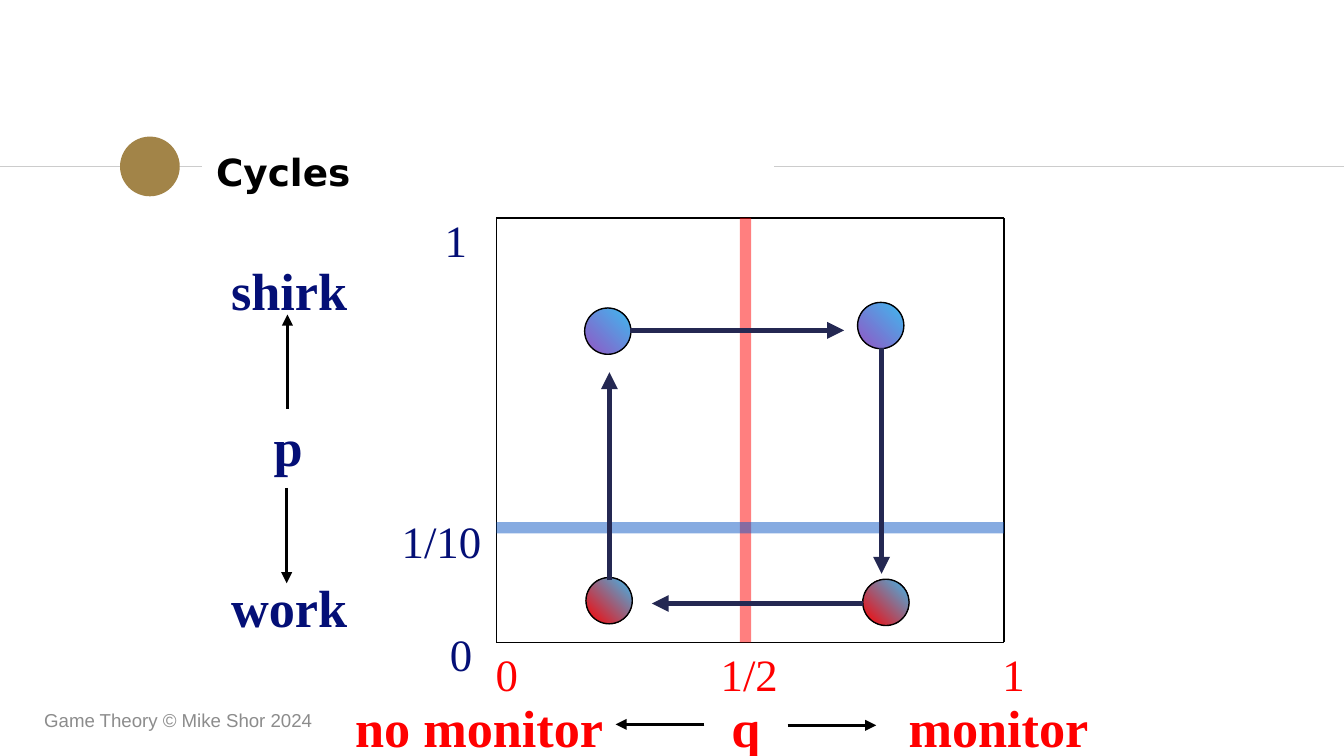
from dataclasses import dataclass
from lxml.etree import SubElement
from pptx import Presentation
from pptx.dml.color import RGBColor
from pptx.enum.shapes import MSO_CONNECTOR, MSO_SHAPE
from pptx.enum.text import MSO_ANCHOR, PP_ALIGN
from pptx.oxml.ns import qn
from pptx.util import Pt

COLORS = {
    "black": "000000", "rule": "CCCCCC", "gold": "A28448", "navy": "040F76",
    "red": "FF0000", "blue": "0E58C4", "ink": "242852", "violet": "9454C3",
    "sky": "3EBBF0", "gray": "8C8C8C",
}
SERIF = "Times New Roman"
LEFT, CENTER, RIGHT = PP_ALIGN.LEFT, PP_ALIGN.CENTER, PP_ALIGN.RIGHT


@dataclass
class Label:
    text: str
    left: float
    top: float
    width: float
    height: float
    color: str
    align: PP_ALIGN = LEFT
    size: float = 24
    bold: bool = False
    font: str = SERIF
    inset: float = 6.5
    anchor: MSO_ANCHOR = MSO_ANCHOR.TOP


@dataclass
class Line:
    x1: float
    y1: float
    x2: float
    y2: float
    color: str = "black"
    width: float = 0.75
    arrow: bool = False
    alpha: int = 100


@dataclass
class Dot:
    left: float
    top: float
    start: str


def rgb(name: str) -> RGBColor:
    return RGBColor.from_string(COLORS[name])


def add_label(shapes, item: Label) -> None:
    box = shapes.add_textbox(Pt(item.left), Pt(item.top), Pt(item.width), Pt(item.height))
    frame = box.text_frame
    frame.word_wrap = True
    frame.margin_top = Pt(item.inset)
    frame.vertical_anchor = item.anchor
    para = frame.paragraphs[0]
    para.alignment = item.align
    run = para.add_run()
    run.text = item.text
    run.font.name = item.font
    run.font.size = Pt(item.size)
    run.font.bold = item.bold
    run.font.color.rgb = rgb(item.color)


def add_line(shapes, item: Line) -> None:
    line = shapes.add_connector(
        MSO_CONNECTOR.STRAIGHT, Pt(item.x1), Pt(item.y1), Pt(item.x2), Pt(item.y2))
    line.line.color.rgb = rgb(item.color)
    line.line.width = Pt(item.width)
    props = line.line._get_or_add_ln()
    if item.alpha < 100:
        tint = props.find(".//" + qn("a:srgbClr"))
        SubElement(tint, qn("a:alpha")).set("val", str(item.alpha * 1000))
    if item.arrow:
        SubElement(props, qn("a:tailEnd")).set("type", "triangle")
    SubElement(line._element.spPr, qn("a:effectLst"))


def add_disc(shapes, left: float, top: float, size: float):
    disc = shapes.add_shape(MSO_SHAPE.OVAL, Pt(left), Pt(top), Pt(size), Pt(size))
    disc.shadow.inherit = False
    return disc


def add_dot(shapes, item: Dot) -> None:
    dot = add_disc(shapes, item.left, item.top, 24.8)
    dot.fill.gradient()
    dot.fill.gradient_angle = 45
    for stop, name in zip(dot.fill.gradient_stops, (item.start, "sky")):
        stop.color.rgb = rgb(name)
    dot.line.color.rgb = rgb("black")
    dot.line.width = Pt(0.75)


deck = Presentation()
deck.slide_width, deck.slide_height = Pt(720), Pt(405)
shapes = deck.slides.add_slide(deck.slide_layouts[6]).shapes

# Title band
add_line(shapes, Line(0, 89.2, 108.5, 89.2, "rule"))
badge = add_disc(shapes, 64.3, 73.2, 32)
badge.fill.solid()
badge.fill.fore_color.rgb = rgb("gold")
badge.line.fill.background()
add_line(shapes, Line(414.7, 89.2, 720, 89.2, "rule"))
add_label(shapes, Label("Cycles", 108.7, 72.7, 305.3, 34.6, "black", size=20, bold=True,
                        font="DejaVu Sans", inset=7.2, anchor=MSO_ANCHOR.MIDDLE))

# Strategy names
for text, left, top, width, color, align in (
    ("q", 378, 365.8, 43.2, "red", CENTER),
    ("p", 137.5, 215.3, 31.7, "navy", RIGHT),
    ("shirk", 100.1, 131.8, 92.9, "navy", RIGHT),
    ("work", 88.6, 301.7, 104.4, "navy", RIGHT),
    ("monitor", 473, 365.8, 123.8, "red", CENTER),
    ("no monitor", 169.9, 365.8, 173.5, "red", CENTER),
):
    add_label(shapes, Label(text, left, top, width, 41, color, align, 28, True))

# Chart frame and the two threshold bands
WEST, EAST, NORTH, SOUTH = 266, 537.8, 116.8, 344.2
for y in (NORTH, SOUTH):
    add_line(shapes, Line(WEST, y, EAST, y))
for x in (WEST, EAST):
    add_line(shapes, Line(x, NORTH, x, SOUTH))
add_line(shapes, Line(399.4, NORTH, 399.4, SOUTH, "red", 6, alpha=50))
add_line(shapes, Line(WEST, 282.7, EAST, 282.7, "blue", 6, alpha=50))

# Axis values
for text, left, width in (("0", 258.5, 19.4), ("1", 530, 19.4), ("1/2", 379, 53.3)):
    add_label(shapes, Label(text, left, 340, width, 36, "red"))
for text, left, top, width in (
    ("0", 234, 329.2, 25), ("1/10", 206.6, 268.6, 59.8), ("1", 231.1, 107.3, 24.5),
):
    add_label(shapes, Label(text, left, top, width, 34, "navy", CENTER))

# Arrows from p and q to their strategies
for ends in (
    (154, 218.9, 154, 168.5), (153.6, 261.4, 153.6, 312.5),
    (421.9, 388.6, 469.4, 388.6), (377.3, 388.1, 329.8, 388.1),
):
    add_line(shapes, Line(*ends, width=1.5, arrow=True))

# Cycle of four states, each followed by its arrow
for dot, ends in (
    (Dot(313.2, 165, "violet"), (337.7, 177, 452.2, 177)),
    (Dot(459.4, 162, "violet"), (472.3, 186.5, 472.3, 307.4)),
    (Dot(462.2, 310.3, "red"), (462.2, 323.3, 349.2, 323.3)),
    (Dot(313.9, 309.4, "red"), (326.5, 311, 326.5, 199.4)),
):
    add_dot(shapes, dot)
    add_line(shapes, Line(*ends, "ink", 3, True))

# Footer
add_label(shapes, Label("Game Theory © Mike Shor 2024", 16.6, 375.1, 243.4, 21.6, "gray",
                        size=10, font="Arial", inset=3.6, anchor=MSO_ANCHOR.MIDDLE))

deck.save("out.pptx")
